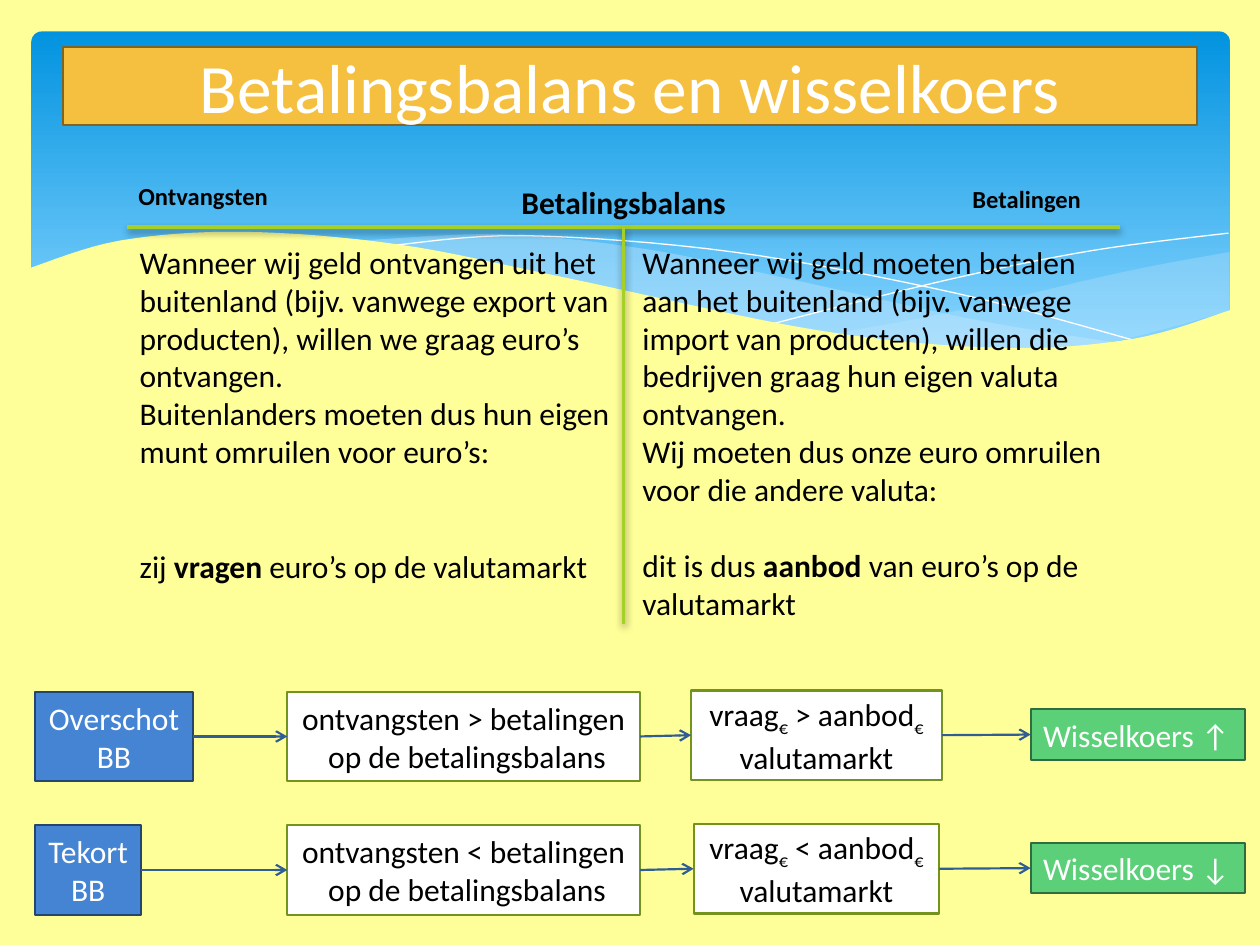
"""Build the slide on the balance of payments and the exchange rate."""
from typing import NamedTuple, Optional

from lxml.etree import SubElement
from pptx import Presentation
from pptx.dml.color import RGBColor
from pptx.enum.shapes import MSO_CONNECTOR, MSO_SHAPE
from pptx.enum.text import MSO_ANCHOR, MSO_AUTO_SIZE, PP_ALIGN
from pptx.oxml.ns import qn
from pptx.util import Inches, Pt

BLACK = RGBColor.from_string("000000")
WHITE = RGBColor.from_string("FFFFFF")
CREAM = RGBColor.from_string("FFFF99")
SKY_TOP = RGBColor.from_string("0293E0")
SKY_BOTTOM = RGBColor.from_string("83D3FE")
MIST = RGBColor.from_string("C6E7FC")
GOLD = RGBColor.from_string("F5C040")
BROWN = RGBColor.from_string("806421")
BLUE = RGBColor.from_string("4584D3")
NAVY = RGBColor.from_string("24456E")
OLIVE = RGBColor.from_string("74931C")
GREEN = RGBColor.from_string("5BD078")
PINE = RGBColor.from_string("2F6D3F")
STEEL = RGBColor.from_string("315D95")
LIME = RGBColor.from_string("A5D028")
FONT = "Calibri"


class Wave(NamedTuple):
    edges: tuple
    fill: Optional[RGBColor] = None
    alpha: int = 100


class Label(NamedTuple):
    text: str
    left: float
    top: float
    width: float
    height: float
    size: int


class Column(NamedTuple):
    left: float
    height: float
    gap: int
    paragraphs: tuple


class Style(NamedTuple):
    fill: RGBColor
    line: RGBColor
    color: RGBColor
    align: PP_ALIGN


class Step(NamedTuple):
    lines: tuple
    left: float
    width: float
    style: Style
    shift: float = 0
    height: float = 0.71


WAVES = [
    Wave((((9.76, 2), (8.91, 2.16), (7.53, 2.48), (6.61, 2.65)),
          ((6.61, 2.65), (7.69, 2.77), (8.63, 2.75), (9.76, 2.47))), MIST, 29),
    Wave((((8.93, 2.73), (7.75, 2.54), (6.29, 2.22), (5.14, 1.98), (3.99, 1.86), (2.86, 1.91)),
          ((2.86, 1.91), (4.49, 2.22), (6.18, 2.58), (7.73, 2.77), (8.93, 2.73))), MIST, 40),
    Wave((((3.09, 1.95), (4.16, 1.87), (5.82, 2), (7.6, 2.33), (9.07, 2.72)),)),
    Wave((((6.13, 2.57), (7.48, 2.23), (8.66, 1.99), (9.75, 1.85)),)),
    Wave((((9.77, 2.46), (8.99, 2.69), (7.93, 2.76), (6.48, 2.62), (4.47, 2.2), (3.16, 1.94),
           (1.93, 1.84), (0.95, 1.91), (0.23, 2.13)), ((0.23, 3.29), (9.77, 3.29))), CREAM),
]
LABELS = [
    Label("Betalingsbalans", 4.04, 1.4, 1.84, 0.4, 18),
    Label("Ontvangsten", 1, 1.39, 1.24, 0.34, 14),
    Label("Betalingen", 7.62, 1.41, 1.07, 0.34, 14),
]
COLUMNS = [
    Column(1.01, 2.83, 44, (
        "Wanneer wij geld ontvangen uit het buitenland (bijv. vanwege export van producten), "
        "willen we graag euro’s ontvangen.",
        "Buitenlanders moeten dus hun eigen munt omruilen voor euro’s:",
        "zij |vragen| euro’s op de valutamarkt")),
    Column(5, 3.13, 22, (
        "Wanneer wij geld moeten betalen aan het buitenland (bijv. vanwege import van producten), "
        "willen die bedrijven graag hun eigen valuta ontvangen.",
        "Wij moeten dus onze euro omruilen voor die andere valuta:",
        "dit is dus |aanbod |van euro’s op de valutamarkt")),
]
CAUSE = Style(BLUE, NAVY, WHITE, PP_ALIGN.CENTER)
LINK = Style(WHITE, OLIVE, BLACK, PP_ALIGN.CENTER)
RESULT = Style(GREEN, PINE, WHITE, PP_ALIGN.LEFT)


def chain(cause: str, cause_width: float, sign: str, market_width: float, arrow: str) -> list:
    """List the four steps of one line of reasoning."""
    return [
        Step((f"{cause}\vBB",), 0.28, cause_width, CAUSE),
        Step((f"ontvangsten {sign} betalingen", " op de betalingsbalans"), 2.28, 2.8, LINK),
        Step((f"vraag|€| {sign} aanbod|€", "valutamarkt"), 6.48 - market_width / 2,
             market_width, LINK, -0.01),
        Step((f"Wisselkoers {arrow}",), 8.18, 1.7, RESULT, 0.14, 0.4),
    ]


def write(tf, lines: tuple, size: float, color: RGBColor, align=PP_ALIGN.LEFT,
          bold: bool = False, subscript: bool = False) -> None:
    """Write the lines; parts between bars become subscript or bold."""
    for i, line in enumerate(lines):
        p = tf.add_paragraph() if i else tf.paragraphs[0]
        p.alignment = align
        p.font.name, p.font.size, p.font.bold = FONT, Pt(size), bold
        p.font.color.rgb = color
        if "|" not in line:
            p.text = line
            continue
        for j, part in enumerate(line.split("|")):
            r = p.add_run()
            r.text = part
            if j % 2 and subscript:
                r._r.get_or_add_rPr().set("baseline", "-25000")
            elif j % 2:
                r.font.bold = True


def paint(sp, fill: RGBColor, line: RGBColor) -> None:
    """Give a shape a solid fill and a thin outline."""
    sp.fill.solid()
    sp.fill.fore_color.rgb = fill
    sp.line.color.rgb = line
    sp.line.width = Pt(1.25)


def smooth(knots: tuple, steps: int = 8) -> list:
    """Return points in EMU along a Catmull-Rom curve through the knots."""
    padded = (knots[0], *knots, knots[-1])
    points = [knots[0]]
    for a, b, c, d in zip(padded, padded[1:], padded[2:], padded[3:]):
        for t in (n / steps for n in range(1, steps + 1)):
            points.append([
                q + t / 2 * (r - p + t * (2 * p - 5 * q + 4 * r - s + t * (3 * (q - r) + s - p)))
                for p, q, r, s in zip(a, b, c, d)])
    return [(Inches(x), Inches(y)) for x, y in points]


def draw_wave(shapes, wave: Wave) -> None:
    """Draw a filled wave, or a hairline when there is no fill."""
    first, *rest = [point for edge in wave.edges for point in smooth(edge)]
    builder = shapes.build_freeform(*first)
    builder.add_line_segments(rest, close=wave.fill is not None)
    sp = builder.convert_to_shape()
    sp.shadow.inherit = False
    if wave.fill is None:
        sp.fill.background()
        sp.line.color.rgb = WHITE
        sp.line.width = Pt(0)
        return
    sp.line.fill.background()
    sp.fill.solid()
    sp.fill.fore_color.rgb = wave.fill
    if wave.alpha < 100:
        color = sp._element.spPr.find(qn("a:solidFill"))[0]
        SubElement(color, qn("a:alpha")).set("val", f"{wave.alpha}000")


def draw_line(shapes, ends: tuple, color: RGBColor, width: float):
    """Draw a straight connector and return it with its effect list."""
    line = shapes.add_connector(MSO_CONNECTOR.STRAIGHT, *map(Inches, ends))
    line.line.color.rgb = color
    line.line.width = Pt(width)
    return line, SubElement(line._element.spPr, qn("a:effectLst"))


def draw_rule(shapes, *ends: float) -> None:
    """Draw a line of the T-account with a soft shadow."""
    _, effects = draw_line(shapes, ends, LIME, 2)
    shadow = SubElement(effects, qn("a:outerShdw"), blurRad=str(Pt(4)), dist=str(Pt(2)),
                        dir="5400000", rotWithShape="0")
    color = SubElement(shadow, qn("a:srgbClr"), val=str(BLACK))
    SubElement(color, qn("a:alpha"), val="38000")


def draw_text(shapes, left: float, top: float, width: float, height: float, wrap: bool):
    """Add an empty text box and return its text frame."""
    tf = shapes.add_textbox(*map(Inches, (left, top, width, height))).text_frame
    tf.word_wrap = wrap
    tf.auto_size = MSO_AUTO_SIZE.SHAPE_TO_FIT_TEXT
    return tf


def draw_step(shapes, step: Step, top: float):
    """Draw one box of a chain."""
    box = (step.left, top + step.shift, step.width, step.height)
    sp = shapes.add_shape(MSO_SHAPE.RECTANGLE, *map(Inches, box))
    sp.shadow.inherit = False
    paint(sp, step.style.fill, step.style.line)
    tf = sp.text_frame
    tf.word_wrap = False
    tf.auto_size = MSO_AUTO_SIZE.SHAPE_TO_FIT_TEXT
    write(tf, step.lines, 18, step.style.color, step.style.align, subscript=True)
    return sp


def draw_chain(shapes, steps: list, top: float) -> None:
    """Draw the boxes of a chain and the arrows between them."""
    boxes = [draw_step(shapes, step, top) for step in steps]
    for start, end in zip(boxes, boxes[1:]):
        arrow, _ = draw_line(shapes, (0, 0, 0, 0), STEEL, 1.25)
        arrow.begin_connect(start, 3)
        arrow.end_connect(end, 1)
        SubElement(arrow.line._get_or_add_ln(), qn("a:tailEnd"), type="arrow")


def draw_backdrop(shapes) -> None:
    """Draw the sky panel with its waves."""
    sky = shapes.add_shape(MSO_SHAPE.ROUNDED_RECTANGLE, *map(Inches, (0.25, 0.25, 9.51, 2.7)))
    sky.adjustments[0] = 0.03
    sky.shadow.inherit = False
    sky.line.fill.background()
    sky.fill.gradient()
    sky.fill.gradient_angle = 270
    for stop, color, position in zip(sky.fill.gradient_stops, (SKY_TOP, SKY_BOTTOM), (0, 0.9)):
        stop.color.rgb = color
        stop.position = position
    for wave in WAVES:
        draw_wave(shapes, wave)


def main() -> None:
    """Build and save the slide."""
    prs = Presentation()
    prs.slide_width, prs.slide_height = Inches(10), Inches(7.5)
    s = prs.slides.add_slide(prs.slide_layouts[5])
    s.background.fill.solid()
    s.background.fill.fore_color.rgb = CREAM
    draw_backdrop(s.shapes)

    title = s.shapes.title
    s.shapes._spTree.append(title._element)
    title.left, title.top, title.width, title.height = map(Inches, (0.5, 0.37, 9, 0.62))
    paint(title, GOLD, BROWN)
    title.text_frame.vertical_anchor = MSO_ANCHOR.MIDDLE
    title.text_frame.auto_size = MSO_AUTO_SIZE.NONE
    write(title.text_frame, ("Betalingsbalans en wisselkoers",), 39.6, WHITE, PP_ALIGN.CENTER)

    draw_rule(s.shapes, 1.01, 1.8, 8.89, 1.8)
    draw_rule(s.shapes, 4.95, 1.8, 4.95, 4.95)
    for label in LABELS:
        tf = draw_text(s.shapes, *label[1:5], wrap=False)
        write(tf, (label.text,), label.size, BLACK, bold=True)
    for column in COLUMNS:
        tf = draw_text(s.shapes, column.left, 1.88, 3.94, column.height, wrap=True)
        write(tf, column.paragraphs, 18, BLACK)
        tf.paragraphs[-1].space_before = Pt(column.gap)

    draw_chain(s.shapes, chain("Overschot", 1.25, ">", 1.99, "↑"), 5.49)
    draw_chain(s.shapes, chain("Tekort", 0.84, "<", 1.95, "↓"), 6.55)
    prs.save("out.pptx")


if __name__ == "__main__":
    main()
